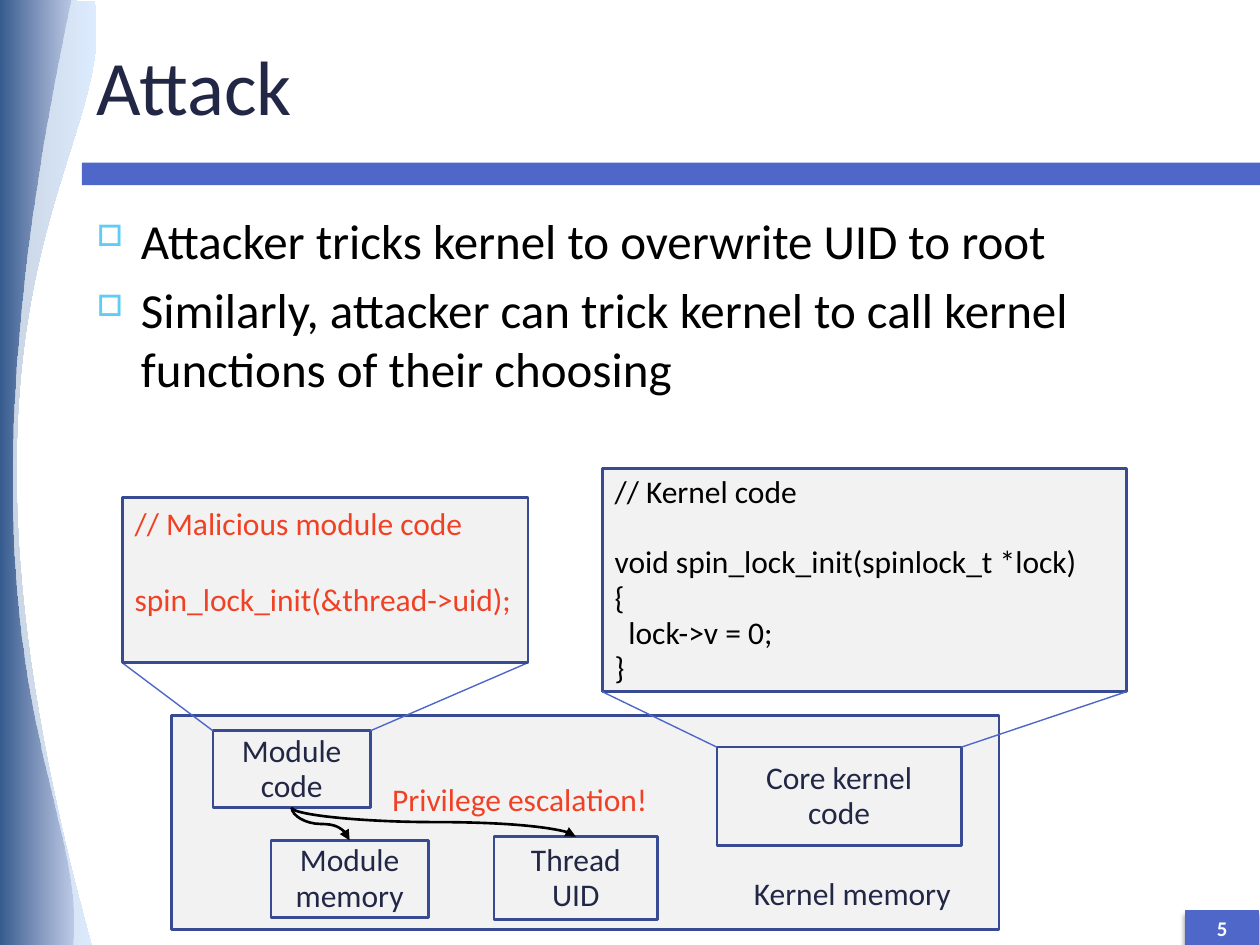
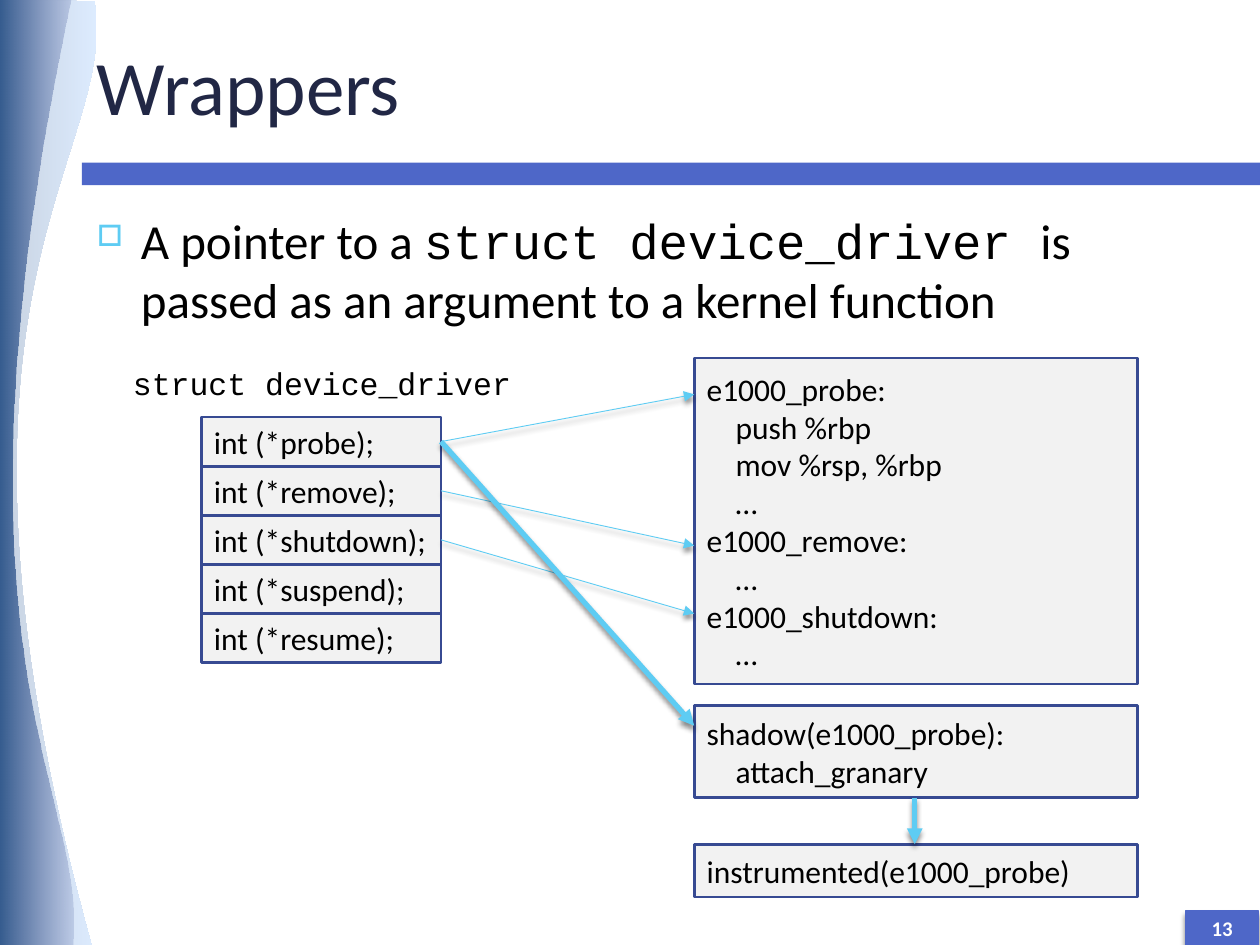
from lxml.etree import SubElement
from pptx import Presentation
from pptx.dml.color import RGBColor
from pptx.enum.shapes import MSO_CONNECTOR as Connector, MSO_SHAPE as Shape
from pptx.enum.text import MSO_ANCHOR as Anchor, PP_ALIGN as Align
from pptx.oxml.ns import qn
from pptx.util import Inches, Pt

NAVY, BLUE, EDGE, SKY = "212745", "4E67C8", "374A92", "5ECCF3"
PALE, RED, BLACK, WHITE = "F2F2F2", "F14124", "000000", "FFFFFF"
BODY_FONT, CODE_FONT = "Calibri", "Courier New"
TIGHT = 0.93

WAVES = [
    ([(0, 0), (0, 7.55)], [(0.75, 0.01), (0.95, 1.27), (-0.73, 2.26), (0.74, 7.55)],
     [("003171", 21), ("65A8FF", 21)]),
    ([(0, 7.55), (0, 0)], [(0.57, 7.54), (0.72, 6.28), (-0.56, 5.29), (0.56, 0)],
     [("003171", 73), (EDGE, 17)]),
]

ATTACK_BULLETS = [
    [("Attacker tricks kernel to overwrite UID to root", BODY_FONT)],
    [("Similarly, attacker can trick kernel to call kernel functions of their choosing",
      BODY_FONT)],
]
MALICIOUS_CODE = [("// Malicious module code", 0, 0), ("spin_lock_init(&thread->uid);", 0, 22)]
KERNEL_CODE = [
    ("// Kernel code", 0, 0),
    ("void spin_lock_init(spinlock_t *lock)", 0, 20.4),
    ("{", 0, 0),
    ("lock->v = 0;", 0.11, 0),
    ("}", 0, 0),
]
MEMORY_BOXES = {
    "module code": (["Module code"], (1.69, 5.8, 1.25, 0.61)),
    "module memory": (["Module memory"], (2.15, 6.67, 1.25, 0.61)),
    "core kernel": (["Core kernel", "code"], (5.69, 5.93, 1.94, 0.78)),
    "thread": (["Thread UID"], (3.92, 6.64, 1.3, 0.66)),
}
MEMORY = (1.36, 5.68, 6.57, 1.7)
MALICIOUS = (0.97, 3.95, 3.22, 1.31)
KERNEL = (4.78, 3.72, 4.16, 1.77)

WRAPPER_BULLETS = [[
    ("A pointer to a ", BODY_FONT),
    ("struct device_driver ", CODE_FONT),
    ("is passed as an argument to a kernel function", BODY_FONT),
]]
DRIVER_FIELDS = ["probe", "remove", "shutdown", "suspend", "resume"]
FIELD_LEFT, FIELD_TOP, FIELD_WIDTH, FIELD_HEIGHT = 1.6, 3.31, 1.9, 0.39
CODE_LEFT, CODE_WIDTH = 5.51, 3.52
CODE_BOXES = [
    (2.84, 2.59, [
        ("e1000_probe:", 0, 0),
        ("push %rbp", 0.23, 0),
        ("mov %rsp, %rbp", 0.23, 0),
        ("…", 0.23, 0),
        ("e1000_remove:", 0, 0),
        ("…", 0.23, 0),
        ("e1000_shutdown:", 0, 0),
        ("…", 0.23, 0),
    ]),
    (5.6, 0.73, [("shadow(e1000_probe):", 0, 0), ("attach_granary", 0.23, 0)]),
    (6.7, 0.42, [("instrumented(e1000_probe)", 0, 0)]),
]
POINTERS = [(0, 3.13, 0.5), (1, 4.33, 0.5), (2, 4.87, 0.5), (0, 5.76, 3)]


def color(value):
    return RGBColor.from_string(value)


def inches(values):
    return [Inches(value) for value in values]


def add_shadow(effects):
    shadow = SubElement(effects, qn("a:outerShdw"), blurRad="38100", dist="30000",
                        dir="5400000", rotWithShape="0")
    black = SubElement(shadow, qn("a:srgbClr"), val=BLACK)
    SubElement(black, qn("a:alpha"), val="45000")


def style_span(span, size, ink, font=BODY_FONT, bold=False):
    span.font.size = Pt(size)
    span.font.name = font
    span.font.bold = bold
    span.font.color.rgb = color(ink)


def write(shape, lines, size=18, ink=BLACK, font=BODY_FONT, align=Align.LEFT,
          anchor=Anchor.MIDDLE, spacing=1.0, bold=False):
    frame = shape.text_frame
    frame.word_wrap = True
    frame.vertical_anchor = anchor
    frame.text = "\n".join(text for text, indent, gap in lines)
    for para, (text, indent, gap) in zip(frame.paragraphs, lines):
        para.alignment = align
        para.line_spacing = spacing
        para.space_before = Pt(gap)
        if indent:
            para._p.get_or_add_pPr().set("marL", str(Inches(indent)))
        for span in para.runs:
            style_span(span, size, ink, font, bold)


def add_label(page, place, text, **style):
    label = page.shapes.add_textbox(*inches(place))
    write(label, [(text, 0, 0)], **style)


def add_box(page, place, fill=PALE, line=EDGE, width=1.5):
    box = page.shapes.add_shape(Shape.RECTANGLE, *inches(place))
    box.shadow.inherit = False
    box.fill.solid()
    box.fill.fore_color.rgb = color(fill)
    box.line.color.rgb = color(line)
    box.line.width = Pt(width)
    return box


def add_line(page, start, end, ink, width, arrow=False, shadow=False, kind=Connector.STRAIGHT):
    line = page.shapes.add_connector(kind, *inches(start + end))
    line.line.color.rgb = color(ink)
    line.line.width = Pt(width)
    properties = line.element.spPr
    if arrow:
        SubElement(properties.find(qn("a:ln")), qn("a:tailEnd"), type="triangle")
    effects = SubElement(properties, qn("a:effectLst"))
    if shadow:
        add_shadow(effects)
    return line


def add_falling_curve(page, start, end):
    (x1, y1), (x2, y2) = start, end
    middle_x, middle_y = (x1 + x2) / 2, (y1 + y2) / 2
    half_width, half_height = (y2 - y1) / 2, (x2 - x1) / 2
    curve = add_line(page, (middle_x - half_width, middle_y - half_height),
                     (middle_x + half_width, middle_y + half_height),
                     BLACK, 1.5, arrow=True, kind=Connector.CURVE)
    frame = curve.element.spPr.find(qn("a:xfrm"))
    frame.set("rot", "16200000")
    frame.set("flipH", "1")


def curve_points(controls, steps=60):
    for step in range(steps + 1):
        t = step / steps
        weights = ((1 - t) ** 3, 3 * t * (1 - t) ** 2, 3 * t * t * (1 - t), t ** 3)
        yield tuple(sum(w * point[axis] for w, point in zip(weights, controls))
                    for axis in (0, 1))


def add_wave(page, corners, controls, stops):
    first, last = corners
    builder = page.shapes.build_freeform(*inches(first))
    builder.add_line_segments([inches(point) for point in [*curve_points(controls), last]])
    wave = builder.convert_to_shape()
    wave.shadow.inherit = False
    wave.line.fill.background()
    wave.fill.gradient()
    wave.fill.gradient_angle = 0
    for stop, (tint, opacity) in zip(wave.fill.gradient_stops, stops):
        stop.color.rgb = color(tint)
    tints = wave.element.spPr.iter(qn("a:srgbClr"))
    for tint, (name, opacity) in zip(list(tints), stops):
        SubElement(tint, qn("a:alpha"), val=str(opacity * 1000))


def add_bullets(page, bullets):
    frame = page.shapes.add_textbox(*inches((0.67, 1.62, 8.92, 5.59))).text_frame
    frame.word_wrap = True
    for index, spans in enumerate(bullets):
        para = frame.paragraphs[0] if index == 0 else frame.add_paragraph()
        para.space_before = Pt(6)
        properties = para._p.get_or_add_pPr()
        properties.set("marL", str(Inches(0.35)))
        properties.set("indent", str(Inches(-0.35)))
        tint = SubElement(properties, qn("a:buClr"))
        SubElement(tint, qn("a:srgbClr"), val=SKY)
        SubElement(properties, qn("a:buSzPct"), val="60000")
        SubElement(properties, qn("a:buChar"), char="□")
        for text, font in spans:
            span = para.add_run()
            span.text = text
            style_span(span, 28, BLACK, font)


def add_page(deck, title, number, bullets):
    page = deck.slides.add_slide(deck.slide_layouts[6])
    band = add_box(page, (0.65, 1.29, 9.35, 0.18), BLUE)
    band.line.fill.background()
    for wave in WAVES:
        add_wave(page, *wave)
    add_label(page, (0.67, 0.13, 8.92, 1.08), title, size=44, ink=NAVY)
    badge = add_box(page, (9.41, 7.23, 0.58, 0.27), BLUE, BLUE, 0.79)
    add_shadow(badge.element.spPr.find(qn("a:effectLst")))
    write(badge, [(number, 0, 0)], size=11.9, ink=WHITE, align=Align.CENTER, bold=True)
    add_bullets(page, bullets)
    return page


def add_callout(page, source, detail):
    left, top, width, height = source
    detail_left, detail_top, detail_width, detail_height = detail
    bottom = detail_top + detail_height
    add_line(page, (left, top), (detail_left, bottom), BLUE, 0.79)
    add_line(page, (left + width, top), (detail_left + detail_width, bottom), BLUE, 0.79)


def build_attack(deck):
    page = add_page(deck, "Attack", "5", ATTACK_BULLETS)
    write(add_box(page, KERNEL), KERNEL_CODE, anchor=Anchor.TOP, spacing=TIGHT)
    add_box(page, MEMORY)
    centered = dict(align=Align.CENTER, spacing=TIGHT)
    for lines, place in MEMORY_BOXES.values():
        write(add_box(page, place), [(text, 0, 0) for text in lines], ink=NAVY, **centered)
    add_label(page, (5.6, 6.84, 2.33, 0.53), "Kernel memory", ink=NAVY, **centered)
    places = {name: place for name, (lines, place) in MEMORY_BOXES.items()}
    add_callout(page, places["module code"], MALICIOUS)
    add_callout(page, places["core kernel"], KERNEL)
    write(add_box(page, MALICIOUS), MALICIOUS_CODE, ink=RED, anchor=Anchor.TOP)
    left, top, width, height = places["module code"]
    for target in ("module memory", "thread"):
        target_left, target_top, target_width, _ = places[target]
        add_falling_curve(page, (left + width / 2, top + height),
                          (target_left + target_width / 2, target_top))
    add_label(page, (2.85, 6.17, 2.55, 0.37), "Privilege escalation!", ink=RED, **centered)


def build_wrappers(deck):
    page = add_page(deck, "Wrappers", "13", WRAPPER_BULLETS)
    for row, field in enumerate(DRIVER_FIELDS):
        place = (FIELD_LEFT, FIELD_TOP + row * FIELD_HEIGHT, FIELD_WIDTH, FIELD_HEIGHT)
        write(add_box(page, place), [(f"int (*{field});", 0, 0)])
    add_label(page, (0.9, 2.84, 3.31, 0.39), "struct device_driver",
              font=CODE_FONT, align=Align.CENTER)
    for top, height, lines in CODE_BOXES:
        write(add_box(page, (CODE_LEFT, top, CODE_WIDTH, height)), lines)
    for row, target, width in POINTERS:
        start = (FIELD_LEFT + FIELD_WIDTH, FIELD_TOP + (row + 0.5) * FIELD_HEIGHT)
        add_line(page, start, (CODE_LEFT, target), SKY, width, arrow=True, shadow=True)
    add_line(page, (7.26, 6.33), (7.26, 6.7), SKY, 3, arrow=True, shadow=True)


def main():
    deck = Presentation()
    deck.slide_width, deck.slide_height = Inches(10), Inches(7.5)
    build_attack(deck)
    build_wrappers(deck)
    deck.save("out.pptx")


if __name__ == "__main__":
    main()
